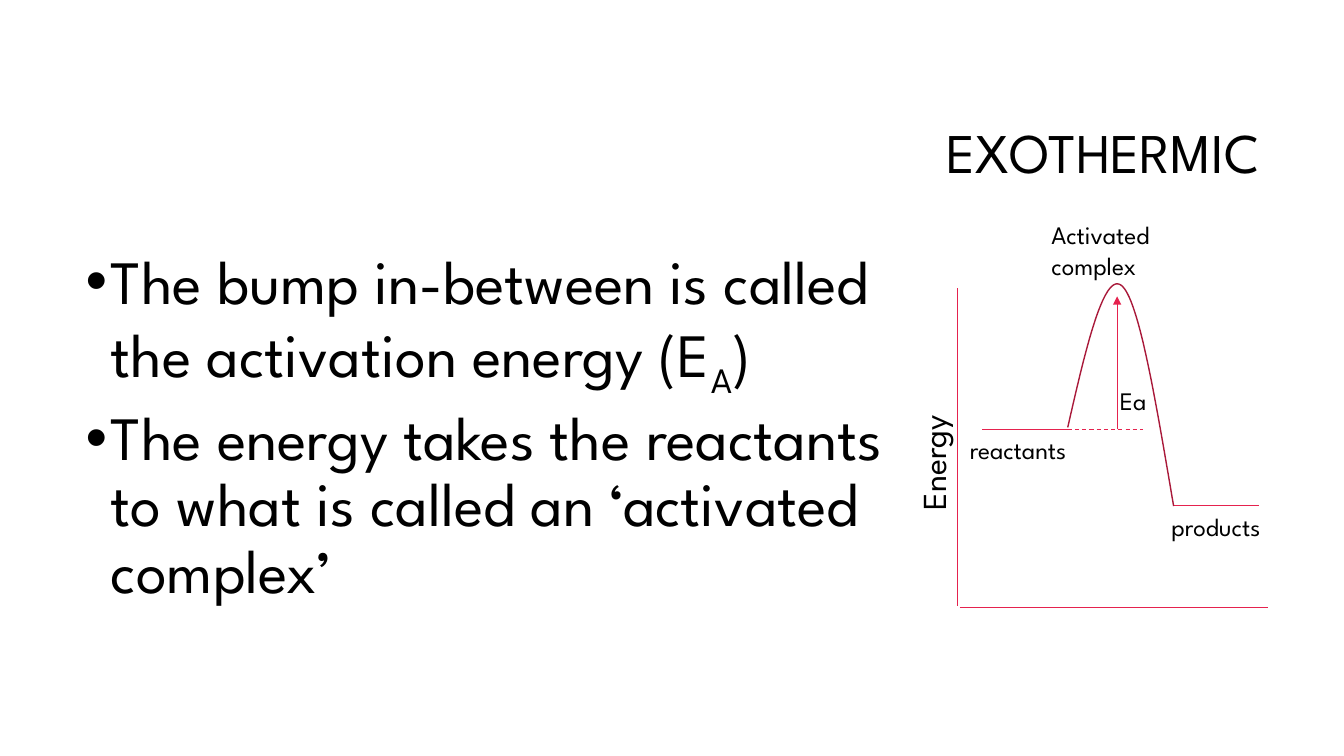
from pptx import Presentation
from pptx.dml.color import RGBColor
from pptx.enum.dml import MSO_LINE
from pptx.enum.shapes import MSO_CONNECTOR
from pptx.enum.text import MSO_ANCHOR, PP_ALIGN
from pptx.oxml.ns import qn
from pptx.util import Inches, Pt
from lxml.etree import SubElement

BLACK = RGBColor(0x00, 0x00, 0x00)
RED = RGBColor(0xE5, 0x22, 0x4E)
CRIMSON = RGBColor(0xA9, 0x19, 0x3A)
FONT = "League Spartan"


def add_run(p, text, size, baseline=None):
    r = p.add_run()
    r.text = text
    r.font.name, r.font.size = FONT, Pt(size)
    r.font.color.rgb = BLACK
    if baseline is not None:
        r.font._element.set("baseline", str(baseline * 1000))


def add_text(s, box, text="", size=18, align=None, anchor=MSO_ANCHOR.TOP,
             spacing=None, rotation=0):
    sp = s.shapes.add_textbox(*(Inches(v) for v in box))
    sp.rotation = rotation
    tf = sp.text_frame
    tf.word_wrap = True
    tf.vertical_anchor = anchor
    p = tf.paragraphs[0]
    p.alignment, p.line_spacing = align, spacing
    if text:
        add_run(p, text, size)
    return tf


def add_line(s, x1, y1, x2, y2, dashed=False, arrow=False):
    line = s.shapes.add_connector(
        MSO_CONNECTOR.STRAIGHT, *(Inches(v) for v in (x1, y1, x2, y2)))
    line.line.color.rgb = RED
    line.line.width = Pt(0.75)
    if dashed:
        line.line.dash_style = MSO_LINE.DASH
    if arrow:
        SubElement(line.line._get_or_add_ln(), qn("a:tailEnd"), type="triangle")
    SubElement(line._element.spPr, qn("a:effectLst"))


def add_bullets(s, box, items, size=44):
    tf = add_text(s, box)
    for i, runs in enumerate(items):
        p = tf.add_paragraph() if i else tf.paragraphs[0]
        p.line_spacing = 0.9
        if i:
            p.space_before = Pt(10)
        pPr = p._p.get_or_add_pPr()
        pPr.set("marL", str(Inches(0.25)))
        pPr.set("indent", str(-Inches(0.25)))
        SubElement(pPr, qn("a:buFont"), typeface="Arial")
        SubElement(pPr, qn("a:buChar"), char="•")
        for text, baseline in runs:
            add_run(p, text, size, baseline)


def bezier(p0, p1, p2, p3, steps=40):
    """Points along a cubic curve, without its start."""
    for i in range(1, steps + 1):
        t = i / steps
        u = 1 - t
        yield tuple(u**3 * a + 3 * u * u * t * b + 3 * u * t * t * c + t**3 * d
                    for a, b, c, d in zip(p0, p1, p2, p3))


def add_energy_curve(s, start, peak, end):
    (x0, y0), (xp, yp), (x1, y1) = start, peak, end
    third = (x1 - x0) / 6
    rise = [start, (x0 + third, y0 - 0.77), (xp - third, yp - 0.13), peak]
    fall = [peak, (xp + third, yp + 0.13), (x1 - third, y1 - 1.03), end]
    points = [(Inches(x), Inches(y)) for x, y in (*bezier(*rise), *bezier(*fall))]
    builder = s.shapes.build_freeform(Inches(x0), Inches(y0))
    builder.add_line_segments(points, close=False)
    sp = builder.convert_to_shape()
    sp.shadow.inherit = False
    sp.fill.background()
    sp.line.color.rgb = CRIMSON
    sp.line.width = Pt(1)


def add_energy_diagram(s, x, y, w, h):
    bottom = y + h
    reactants_y, products_y = y + 1.4, y + 2.16
    rise_x, peak_x, fall_x = x + 1.09, x + 1.62, x + 2.14

    # Axes
    add_line(s, x, y, x, bottom - 0.02)
    add_line(s, x + 0.02, bottom, x + w, bottom)
    add_text(s, (x - 1.41, y + 0.89, 2.32, 0.5), "Energy", 24, rotation=270)

    # Energy levels
    add_line(s, x + 0.24, reactants_y, rise_x, reactants_y)
    add_line(s, fall_x, products_y, fall_x + 0.85, products_y)
    add_text(s, (x + 0.02, reactants_y, 1.56, 0.4), "reactants")
    add_text(s, (x + 2.02, products_y, 1.56, 0.4), "products")

    # Activation hump
    add_energy_curve(s, (rise_x, reactants_y - 0.02), (peak_x, y - 0.03),
                     (fall_x, products_y))
    add_line(s, rise_x, reactants_y, rise_x + 0.75, reactants_y, dashed=True)
    add_line(s, x + 1.58, reactants_y, x + 1.58, y + 0.08, arrow=True)
    add_text(s, (x + 0.83, y - 0.73, 1.56, 0.71), "Activated complex")
    add_text(s, (x + 1.51, y + 0.91, 1.56, 0.4), "Ea")


def main():
    prs = Presentation()
    prs.slide_width, prs.slide_height = Inches(13.33), Inches(7.5)
    s = prs.slides.add_slide(prs.slide_layouts[6])
    add_text(s, (3.17, 0.84, 9.42, 1.41), "EXOTHERMIC", 40, PP_ALIGN.RIGHT,
             MSO_ANCHOR.MIDDLE, 0.9)
    add_bullets(s, (0.75, 2.44, 8.36, 5.14), [
        [("The bump in-between is called the activation energy (E", None),
         ("A", -25), (")", 0)],
        [("The energy takes the reactants to what is called an ‘activated complex’",
          None)],
    ])
    add_energy_diagram(s, 9.5, 2.86, 3.08, 3.17)
    prs.save("out.pptx")


if __name__ == "__main__":
    main()
